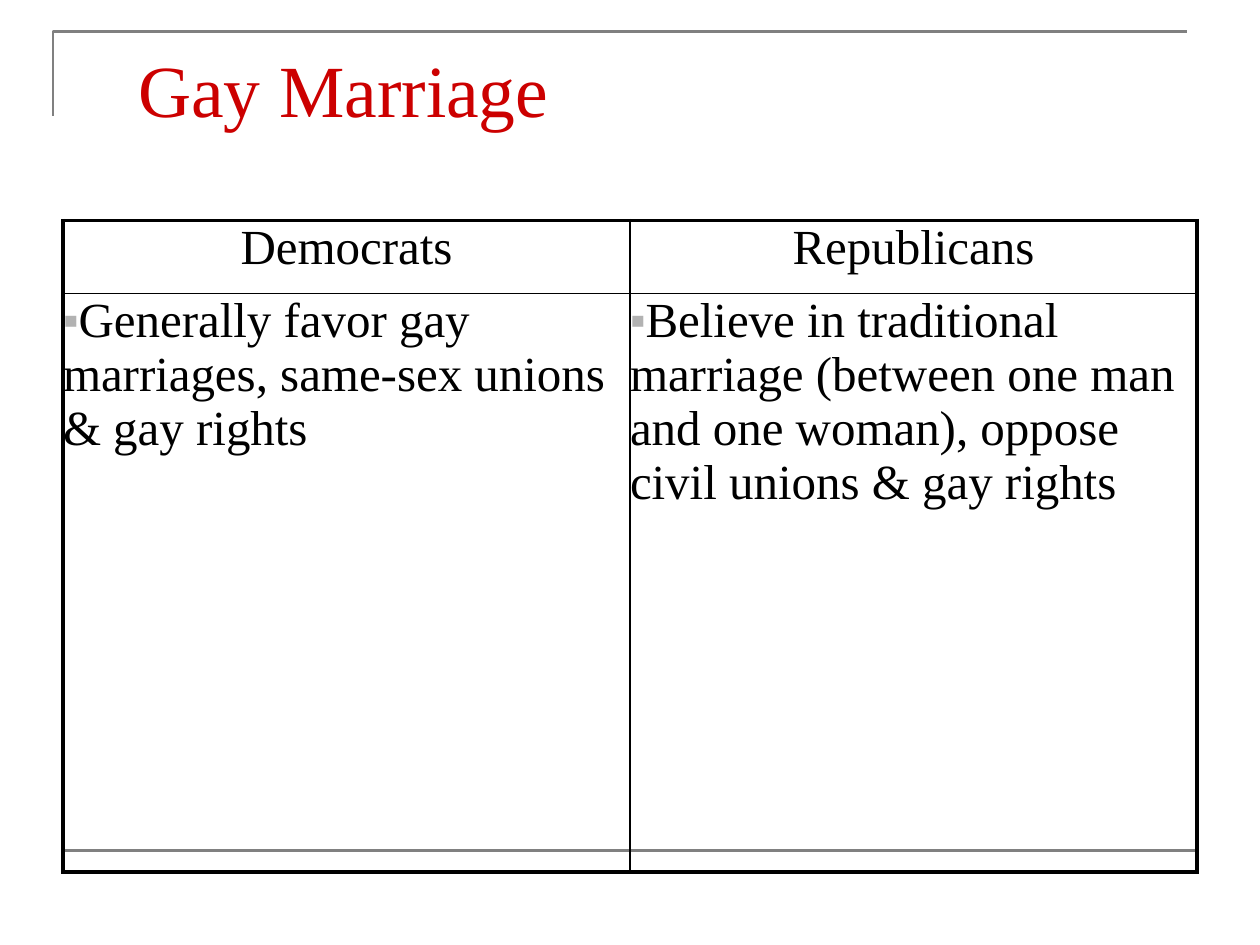
from dataclasses import dataclass

from lxml.etree import SubElement
from pptx import Presentation
from pptx.dml.color import RGBColor
from pptx.enum.shapes import MSO_CONNECTOR
from pptx.enum.text import MSO_ANCHOR, PP_ALIGN
from pptx.oxml import parse_xml
from pptx.oxml.ns import qn
from pptx.util import Inches, Pt

FONT = "Times New Roman"
NS = 'xmlns:a="http://schemas.openxmlformats.org/drawingml/2006/main"'
THICK, THIN = 2.25, 1


@dataclass
class Party:
    name: str
    view: str


PARTIES = [
    Party("Democrats", "Generally favor gay marriages, same-sex unions & gay rights"),
    Party("Republicans", "Believe in traditional marriage (between one man and one woman), "
          "oppose civil unions & gay rights"),
]


def color(code: str) -> RGBColor:
    return RGBColor.from_string(code)


def style(para, size: float, code: str) -> None:
    para.font.name = FONT
    para.font.size = Pt(size)
    para.font.bold = False
    para.font.color.rgb = color(code)


def stroke(line) -> None:
    line.color.rgb = color("808080")
    line.width = Pt(1.5)


def draw_frame(slide) -> None:
    pen = slide.shapes.build_freeform(Inches(0.42), Inches(0.92))
    pen.add_line_segments(
        [(Inches(0.42), Inches(0.25)), (Inches(9.42), Inches(0.25))], close=False)
    corner = pen.convert_to_shape()
    corner.shadow.inherit = False
    corner.fill.background()
    stroke(corner.line)
    rule = slide.shapes.add_connector(
        MSO_CONNECTOR.STRAIGHT, Inches(0.5), Inches(6.75), Inches(9.5), Inches(6.75))
    stroke(rule.line)
    SubElement(rule._element.spPr, qn("a:effectLst"))


def draw_title(slide, text: str) -> None:
    box = slide.shapes.add_textbox(Inches(1), Inches(0.3), Inches(8.5), Inches(1.25))
    frame = box.text_frame
    frame.word_wrap = True
    frame.vertical_anchor = MSO_ANCHOR.TOP
    para = frame.paragraphs[0]
    para.text = text
    style(para, 42, "CC0000")


def add_bullet(para) -> None:
    props = para._p.get_or_add_pPr()
    props.set("marL", "0")
    props.set("indent", "0")
    for tag, key, val in (("buSzPct", "val", "90000"), ("buFont", "typeface", FONT),
                          ("buChar", "char", "▪")):
        SubElement(props, qn(f"a:{tag}")).set(key, val)
    tint = parse_xml(f'<a:buClr {NS}><a:srgbClr val="B2B2B2"/></a:buClr>')
    props.insert(0, tint)


def add_edges(cell, row: int, col: int) -> None:
    outer = {"L": col == 0, "R": col == 1, "T": row == 0, "B": row == 1}
    props = cell._tc.get_or_add_tcPr()
    for pos, (side, thick) in enumerate(outer.items()):
        width = Pt(THICK if thick else THIN)
        props.insert(pos, parse_xml(
            f'<a:ln{side} {NS} w="{width}"><a:solidFill><a:srgbClr val="000000"/>'
            f'</a:solidFill></a:ln{side}>'))


def fill_cell(cell, text: str, row: int, col: int) -> None:
    cell.margin_left = cell.margin_right = cell.margin_top = cell.margin_bottom = 0
    cell.fill.background()
    add_edges(cell, row, col)
    para = cell.text_frame.paragraphs[0]
    para.text = text
    style(para, 28, "000000")
    if row == 0:
        para.alignment = PP_ALIGN.CENTER
    else:
        add_bullet(para)


def draw_table(slide, parties: list[Party]) -> None:
    table = slide.shapes.add_table(
        2, len(parties), Inches(0.5), Inches(1.75), Inches(9), Inches(5.17)).table
    table.first_row = False
    table.horz_banding = False
    table.rows[0].height = Inches(0.58)
    table.rows[1].height = Inches(4.59)
    for col, party in enumerate(parties):
        for row, text in enumerate((party.name, party.view)):
            fill_cell(table.cell(row, col), text, row, col)


def main() -> None:
    deck = Presentation()
    deck.slide_width = Inches(10)
    deck.slide_height = Inches(7.5)
    slide = deck.slides.add_slide(deck.slide_layouts[6])
    draw_frame(slide)
    draw_title(slide, "Gay Marriage")
    draw_table(slide, PARTIES)
    deck.save("out.pptx")


if __name__ == "__main__":
    main()
